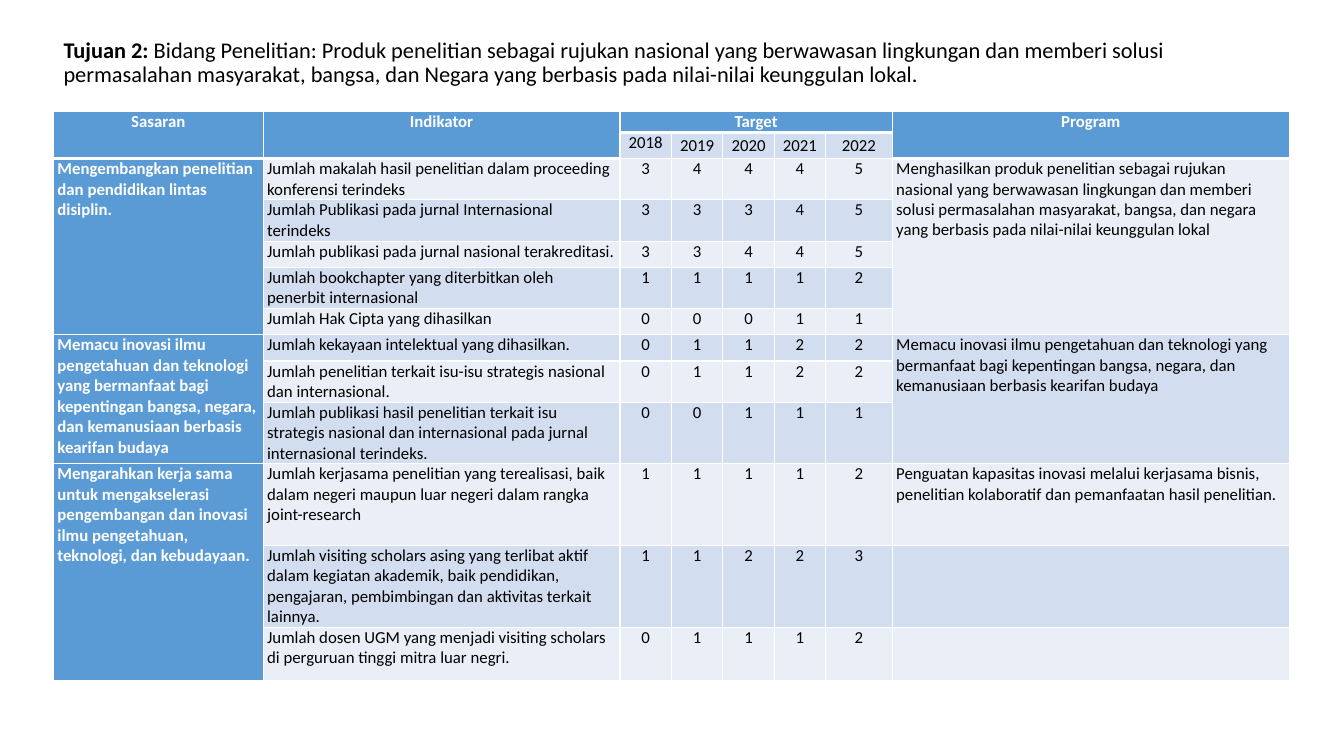
import pptx
import pptx.util
import pptx.dml.color
import pptx.enum.text
import pptx.oxml

Inches = pptx.util.Inches
Pt = pptx.util.Pt
ALIGN = pptx.enum.text.PP_ALIGN
ANCHOR = pptx.enum.text.MSO_ANCHOR

COLORS = {"head": "5B9BD5", "light": "EAEFF7", "dark": "D2DEEF",
          "white": "FFFFFF", "black": "000000"}
SPACE = "http://schemas.openxmlformats.org/drawingml/2006/main"

WIDTHS = [2.08, 3.54, 0.51, 0.51, 0.51, 0.51, 0.66, 3.94]
HEIGHTS = [0.2, 0.26, 0.41, 0.41, 0.26, 0.41, 0.26, 0.26, 0.41, 0.61, 0.81, 0.81, 0.53]
HEADS = {0: "Sasaran", 1: "Indikator", 2: "Target", 7: "Program"}
YEARS = ["2018", "2019", "2020", "2021", "2022"]
GOALS = {
    2: "Mengembangkan penelitian dan pendidikan lintas disiplin.",
    7: "Memacu inovasi ilmu pengetahuan dan teknologi yang bermanfaat bagi kepentingan bangsa, negara, dan kemanusiaan berbasis kearifan budaya",
    10: "Mengarahkan kerja sama untuk mengakselerasi pengembangan dan inovasi ilmu pengetahuan, teknologi, dan kebudayaan.",
}
PLANS = {
    2: "Menghasilkan produk penelitian sebagai rujukan nasional yang berwawasan lingkungan dan memberi solusi permasalahan masyarakat, bangsa, dan negara yang berbasis pada nilai-nilai keunggulan lokal",
    7: GOALS[7],
    10: "Penguatan kapasitas inovasi melalui kerjasama bisnis, penelitian kolaboratif dan pemanfaatan hasil penelitian.",
}
TARGETS = [
    ("Jumlah makalah hasil penelitian dalam proceeding konferensi terindeks", "34445"),
    ("Jumlah Publikasi pada jurnal Internasional terindeks", "33345"),
    ("Jumlah publikasi pada jurnal nasional terakreditasi.", "33445"),
    ("Jumlah bookchapter yang diterbitkan oleh penerbit internasional", "11112"),
    ("Jumlah Hak Cipta yang dihasilkan", "00011"),
    ("Jumlah kekayaan intelektual yang dihasilkan.", "01122"),
    ("Jumlah penelitian terkait isu-isu strategis nasional dan internasional.", "01122"),
    ("Jumlah publikasi hasil penelitian terkait isu strategis nasional dan internasional pada jurnal internasional terindeks.", "00111"),
    ("Jumlah kerjasama penelitian yang terealisasi, baik dalam negeri maupun luar negeri dalam rangka joint-research", "11112"),
    ("Jumlah visiting scholars asing yang terlibat aktif dalam kegiatan akademik, baik pendidikan, pengajaran, pembimbingan dan aktivitas terkait lainnya.", "11223"),
    ("Jumlah dosen UGM yang menjadi visiting scholars di perguruan tinggi mitra luar negri.", "01112"),
]
MERGES = [(0, 0, 1, 0), (0, 1, 1, 1), (0, 2, 0, 6), (0, 7, 1, 7),
          (2, 0, 6, 0), (7, 0, 9, 0), (10, 0, 12, 0), (2, 7, 6, 7), (7, 7, 9, 7)]


class Board:
    def __init__(self, slide, face="Calibri"):
        self.slide = slide
        self.face = face

    def style(self, font, size, color, bold):
        font.name = self.face
        font.size = Pt(size)
        font.bold = bold
        font.color.rgb = pptx.dml.color.RGBColor.from_string(COLORS[color])

    def title(self, lead, rest, box):
        shape = self.slide.shapes.title
        shape.left, shape.top, shape.width, shape.height = map(Inches, box)
        frame = shape.text_frame
        frame.word_wrap = True
        frame.auto_size = pptx.enum.text.MSO_AUTO_SIZE.NONE
        frame.vertical_anchor = ANCHOR.MIDDLE
        para = frame.paragraphs[0]
        para.alignment = ALIGN.LEFT
        para.line_spacing = 0.9
        for text, bold in ((lead, True), (rest, False)):
            run = para.add_run()
            run.text = text
            self.style(run.font, 16, "black", bold)

    def table(self, box, widths, heights):
        frame = self.slide.shapes.add_table(len(heights), len(widths), *map(Inches, box))
        grid = frame.table
        for col, width in zip(grid.columns, widths):
            col.width = Inches(width)
        for row, height in zip(grid.rows, heights):
            row.height = Inches(height)
        return grid

    def border(self, cell, thick):
        props = cell._tc.get_or_add_tcPr()
        for spot, side in enumerate("LRTB"):
            width = Pt(3 if side in thick else 1)
            line = pptx.oxml.parse_xml(
                f'<a:ln{side} xmlns:a="{SPACE}" w="{width}"><a:solidFill>'
                f'<a:srgbClr val="{COLORS["white"]}"/></a:solidFill></a:ln{side}>')
            props.insert(spot, line)

    def cell(self, cell, text, fill, head, center, middle, thick):
        cell.margin_left = cell.margin_right = Inches(0.04)
        cell.margin_top = cell.margin_bottom = 0
        cell.vertical_anchor = ANCHOR.MIDDLE if middle else ANCHOR.TOP
        cell.fill.solid()
        cell.fill.fore_color.rgb = pptx.dml.color.RGBColor.from_string(COLORS[fill])
        self.border(cell, thick)
        cell.text_frame.text = text
        para = cell.text_frame.paragraphs[0]
        para.alignment = ALIGN.CENTER if center else ALIGN.LEFT
        for run in para.runs:
            self.style(run.font, 12, "white" if head else "black", head)


def words(row, col):
    if row == 0:
        return HEADS.get(col, "")
    if row == 1:
        return YEARS[col - 2] if 2 <= col <= 6 else ""
    if col == 0:
        return GOALS.get(row, "")
    if col == 7:
        return PLANS.get(row, "")
    label, marks = TARGETS[row - 2]
    return label if col == 1 else marks[col - 2]


def main():
    deck = pptx.Presentation()
    deck.slide_width = Inches(13.33)
    deck.slide_height = Inches(7.5)
    board = Board(deck.slides.add_slide(deck.slide_layouts[5]))
    board.title(
        "Tujuan 2: ",
        "Bidang Penelitian: Produk penelitian sebagai rujukan nasional yang berwawasan lingkungan dan memberi solusi permasalahan masyarakat, bangsa, dan Negara yang berbasis pada nilai-nilai keunggulan lokal.",
        (0.53, 0.27, 11.5, 0.71))
    grid = board.table((0.53, 1.11, sum(WIDTHS), sum(HEIGHTS)), WIDTHS, HEIGHTS)
    for row in range(len(HEIGHTS)):
        for col in range(len(WIDTHS)):
            year = 2 <= col <= 6
            head = row == 0 or col == 0 or (row == 1 and not year)
            fill = "head" if head else "dark" if row % 2 else "light"
            last = 0 if year else 1
            thick = "B" if row in (0, last) else "T" if row == last + 1 else ""
            board.cell(grid.cell(row, col), words(row, col), fill, head,
                       row < 2 or year, row == 1 and col > 2, thick)
    for top, left, bottom, right in MERGES:
        grid.cell(top, left).merge(grid.cell(bottom, right))
    deck.save("out.pptx")


if __name__ == "__main__":
    main()
